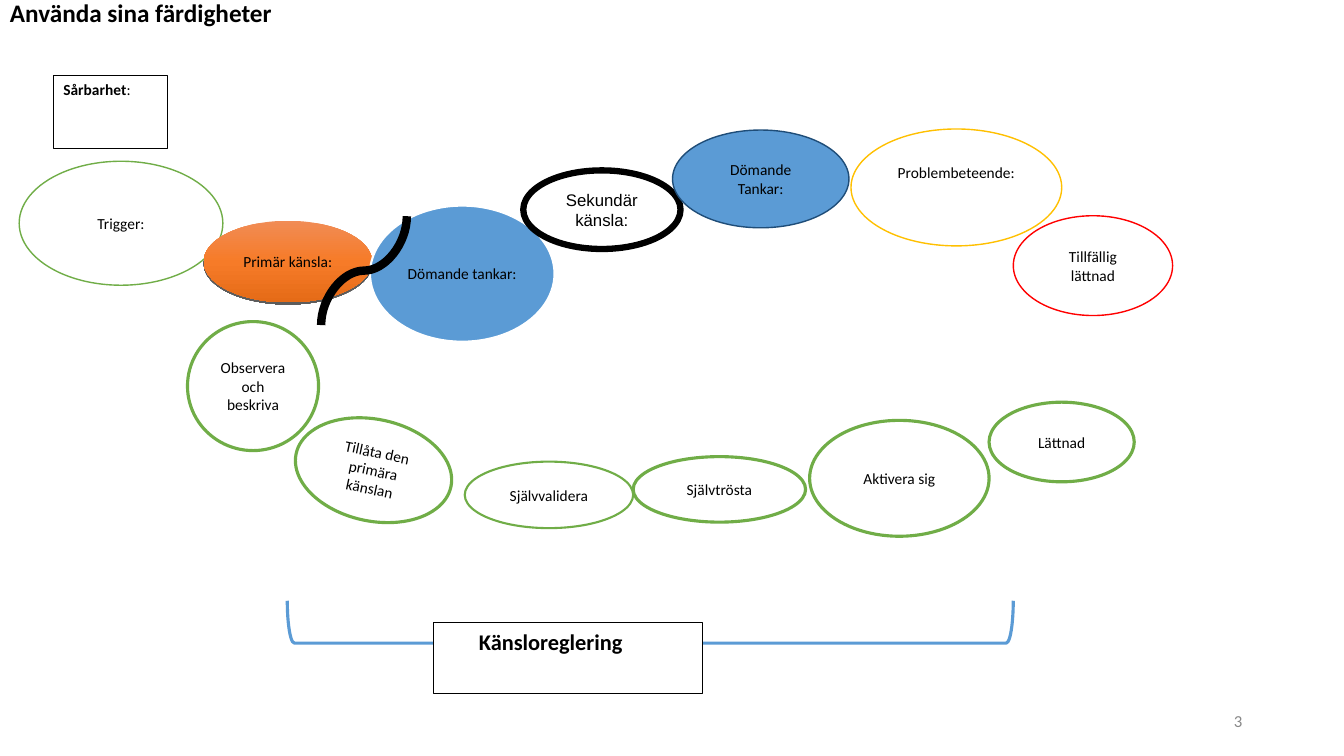
from copy import deepcopy

from lxml import etree
from pptx import Presentation
from pptx.dml.color import RGBColor
from pptx.enum.shapes import MSO_CONNECTOR, MSO_SHAPE
from pptx.enum.text import MSO_ANCHOR, PP_ALIGN
from pptx.oxml.ns import qn
from pptx.util import Pt

PX = 9144  # EMU per px, 100 px to the inch

ELLIPSE, RECTANGLE, BRACE = MSO_SHAPE.OVAL, MSO_SHAPE.RECTANGLE, MSO_SHAPE.LEFT_BRACE
CURVE = MSO_CONNECTOR.CURVE
LEFT, CENTER, RIGHT = PP_ALIGN.LEFT, PP_ALIGN.CENTER, PP_ALIGN.RIGHT
TOP, MIDDLE = MSO_ANCHOR.TOP, MSO_ANCHOR.MIDDLE

BLACK = RGBColor(0x00, 0x00, 0x00)
WHITE = RGBColor(0xFF, 0xFF, 0xFF)
GREEN = RGBColor(0x70, 0xAD, 0x47)
BLUE = RGBColor(0x5B, 0x9B, 0xD5)
NAVY = RGBColor(0x1F, 0x4D, 0x78)
YELLOW = RGBColor(0xFF, 0xC0, 0x00)
RED = RGBColor(0xFF, 0x00, 0x00)
GRAY = RGBColor(0x88, 0x88, 0x88)
ORANGES = [
    (0, RGBColor(0xF1, 0x8C, 0x55)),
    (0.5, RGBColor(0xF6, 0x7B, 0x28)),
    (1, RGBColor(0xE5, 0x6B, 0x17)),
]

# text, box, fill, line colour, line width
PROBLEM_PATH = [
    ("Trigger:", (19, 160, 202, 123), WHITE, GREEN, 1),
    ("Primär känsla:", (202, 219, 167, 81), ORANGES, None, 0),
    ("Dömande tankar:", (367, 204, 183, 135), BLUE, WHITE, 1.5),
    ("Sekundär känsla:", (519, 169, 156, 78), WHITE, BLACK, 4.5),
    ("Dömande Tankar:", (667, 129, 175, 97), BLUE, NAVY, 1),
    ("Problembeteende:", (844, 128, 209, 116), WHITE, YELLOW, 1),
    ("Tillfällig lättnad", (1005, 214, 158, 99), WHITE, RED, 1),
]
# text, box, line width
SKILL_PATH = [
    ("Observera och beskriva", (186, 319, 130, 128), 2.25),
    ("Tillåta den primära känslan", (292, 416, 157, 101), 2.25),
    ("Självvalidera", (461, 458, 167, 66), 1.5),
    ("Självtrösta", (628, 453, 171, 65), 2.25),
    ("Aktivera sig", (803, 417, 178, 115), 2.25),
    ("Lättnad", (981, 399, 144, 79), 2.25),
]
# departures from the common ellipse style
ELLIPSE_FONTS = {"Sekundär känsla:": {"name": "Arial", "size": Pt(12)}}
ELLIPSE_INSETS = {"Problembeteende:": {"bottom": 35}}
ELLIPSE_ROTATIONS = {"Tillåta den primära känslan": 12}


def emu(box):
    return [value * PX for value in box]


def write(shape, runs, align=LEFT, anchor=TOP, insets=None, **font_format):
    """Fill a shape with one paragraph of (text, bold) runs."""
    frame = shape.text_frame
    frame.word_wrap = True
    frame.vertical_anchor = anchor
    margins = {"left": 10, "top": 5, "right": 10, "bottom": 5} | (insets or {})
    for side, px in margins.items():
        setattr(frame, f"margin_{side}", px * PX)
    paragraph = frame.paragraphs[0]
    paragraph.alignment = align
    values = {"name": "Calibri", "size": Pt(11)} | font_format
    color = values.pop("color", BLACK)
    for text, bold in runs:
        run = paragraph.add_run()
        run.text = text
        run.font.color.rgb = color
        for name, value in (values | {"bold": bold}).items():
            setattr(run.font, name, value)


def add_gradient(shape, stops):
    shape.fill.gradient()
    shape.fill.gradient_angle = 270
    first = shape.fill.gradient_stops[0]._gs
    first.addnext(deepcopy(first))
    for stop, (position, color) in zip(shape.fill.gradient_stops, stops):
        stop.position = position
        stop.color.rgb = color


def add_drop_shadow(shape):
    effects = shape._element.spPr.find(qn("a:effectLst"))
    shadow = etree.SubElement(effects, qn("a:outerShdw"), blurRad="0", dist="19050",
                              dir="5400000", algn="ctr", rotWithShape="0")
    black = etree.SubElement(shadow, qn("a:srgbClr"), val="000000")
    etree.SubElement(black, qn("a:alpha"), val="63000")


def add_outline(slide, kind, box, fill, line, width):
    shape = slide.shapes.add_shape(kind, *emu(box))
    shape.shadow.inherit = False
    if fill is None:
        shape.fill.background()
    elif isinstance(fill, list):
        add_gradient(shape, fill)
        add_drop_shadow(shape)
    else:
        shape.fill.solid()
        shape.fill.fore_color.rgb = fill
    if line is None:
        shape.line.fill.background()
    else:
        shape.line.color.rgb = line
        shape.line.width = Pt(width)
    return shape


def add_step(slide, text, box, fill, line, width):
    step = add_outline(slide, ELLIPSE, box, fill, line, width)
    step.rotation = ELLIPSE_ROTATIONS.get(text, 0)
    write(step, [(text, False)], CENTER, MIDDLE, ELLIPSE_INSETS.get(text),
          **ELLIPSE_FONTS.get(text, {}))


def add_barrier(slide):
    """Thick curve between the primary feeling and the judging thoughts."""
    barrier = slide.shapes.add_connector(CURVE, *emu((307, 226, 415, 311)))
    barrier.line.color.rgb = BLACK
    barrier.line.width = Pt(6)
    properties = barrier._element.spPr
    properties.find(qn("a:xfrm")).set("rot", "5400000")
    etree.SubElement(properties, qn("a:effectLst"))


def add_label(slide, box, text, bold=False, **text_format):
    label = slide.shapes.add_textbox(*emu(box))
    write(label, [(text, bold)], **text_format)


def main():
    deck = Presentation()
    deck.slide_width, deck.slide_height = emu((1333, 750))
    slide = deck.slides.add_slide(deck.slide_layouts[6])

    # Vulnerability and the path to the problem behaviour
    vulnerability = add_outline(slide, RECTANGLE, (53, 75, 113, 72), WHITE, BLACK, 0.75)
    write(vulnerability, [("Sårbarhet", True), (":", False)])
    for step in PROBLEM_PATH:
        add_step(slide, *step)
    add_barrier(slide)

    # Path of skills
    for text, box, width in SKILL_PATH:
        add_step(slide, text, box, WHITE, GREEN, width)

    # Brace that sums up the skills
    brace = add_outline(slide, BRACE, (603, 278, 84, 720), None, BLUE, 2.25)
    brace.rotation = 270
    regulation = add_outline(slide, RECTANGLE, (430, 618, 267, 70), WHITE, BLACK, 0.75)
    write(regulation, [("Känsloreglering", True)], insets={"left": 45}, size=Pt(16))

    # Title and slide number
    add_label(slide, (0, -3, 1333, 50), "Använda sina färdigheter", bold=True,
              insets={"top": 0}, size=Pt(18))
    add_label(slide, (942, 695, 300, 40), "3", align=RIGHT, anchor=MIDDLE,
              size=Pt(12), color=GRAY)

    deck.save("out.pptx")


if __name__ == "__main__":
    main()
